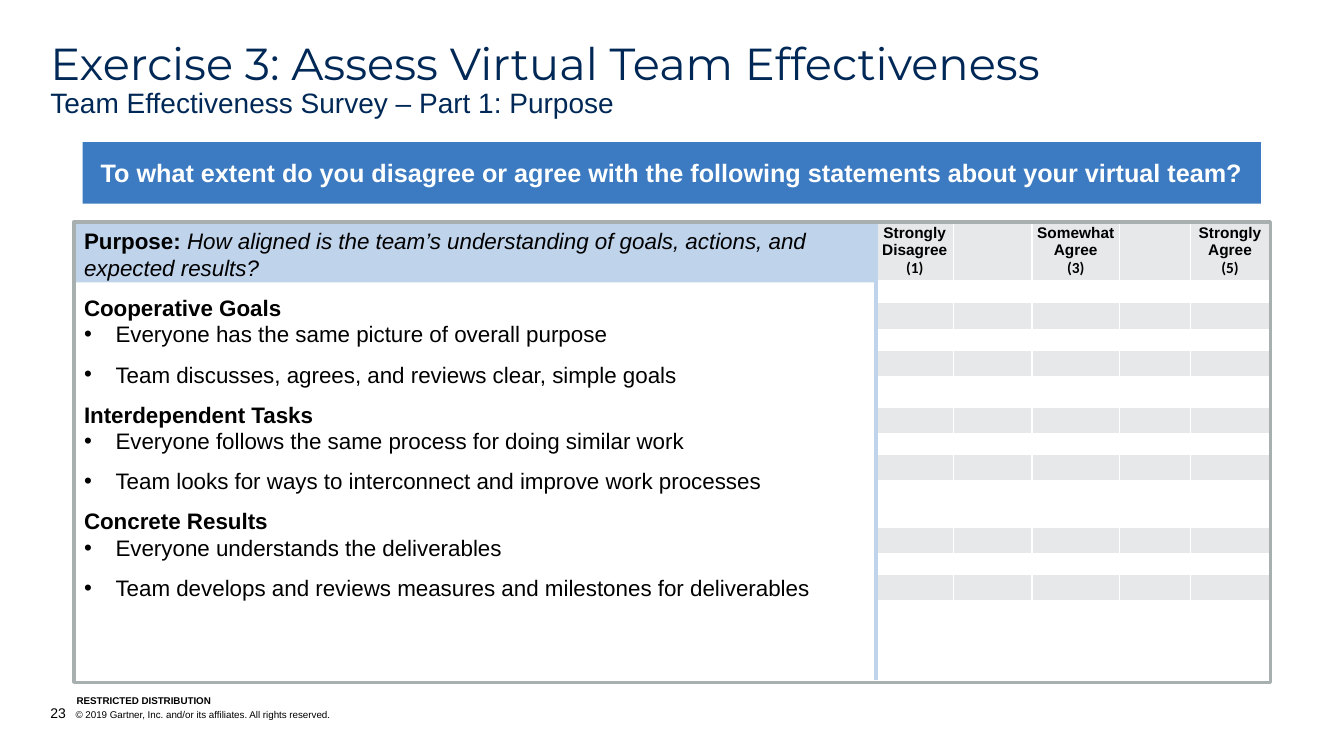
from lxml import etree
from pptx import Presentation
from pptx.dml.color import RGBColor
from pptx.enum.shapes import MSO_CONNECTOR, MSO_SHAPE
from pptx.enum.text import MSO_ANCHOR, MSO_AUTO_SIZE, PP_ALIGN
from pptx.oxml.ns import qn
from pptx.util import Pt

RECT, STRAIGHT = MSO_SHAPE.RECTANGLE, MSO_CONNECTOR.STRAIGHT
TOP, MIDDLE, BOTTOM = MSO_ANCHOR.TOP, MSO_ANCHOR.MIDDLE, MSO_ANCHOR.BOTTOM
LEFT, CENTER = PP_ALIGN.LEFT, PP_ALIGN.CENTER
NO_FIT = MSO_AUTO_SIZE.NONE

BLACK = RGBColor(0x00, 0x00, 0x00)
WHITE = RGBColor(0xFF, 0xFF, 0xFF)
NAVY = RGBColor(0x00, 0x28, 0x56)
BLUE = RGBColor(0x3C, 0x7B, 0xC1)
PALE_BLUE = RGBColor(0xBF, 0xD3, 0xEB)
PALE_GREY = RGBColor(0xE7, 0xE8, 0xE9)
FRAME_GREY = RGBColor(0xA7, 0xAF, 0xAF)

GOALS = [
    ("Cooperative Goals", [
        "Everyone has the same picture of overall purpose",
        "Team discusses, agrees, and reviews clear, simple goals"]),
    ("Interdependent Tasks", [
        "Everyone follows the same process for doing similar work",
        "Team looks for ways to interconnect and improve work processes"]),
    ("Concrete Results", [
        "Everyone understands the deliverables",
        "Team develops and reviews measures and milestones for deliverables"]),
]
SCALE = {0: ("Strongly Disagree", "(1)"), 2: ("Somewhat Agree", "(3)"),
         4: ("Strongly Agree", "(5)")}
COLUMNS = [55.5, 56, 62.5, 51, 56]
GAPS = [15.7, 15, 22, 15, 33.5, 14.3]
HEADER_ROW, ANSWER_ROW, LAST_ROW = 43, 18.8, 29
TABLE_LEFT, TABLE_TOP = 625.7, 157.7
LINE, GAP, INDENT = 19.2, 9.4, 22.5


def add_text(p, text, size=16, font="Arial", color=BLACK, bold=False, italic=False):
    """Add a formatted run to a paragraph."""
    r = p.add_run()
    r.text = text
    r.font.size, r.font.name = Pt(size), font
    r.font.bold, r.font.italic = bold, italic
    r.font.color.rgb = color


def next_paragraph(tf):
    """Return the first paragraph while it is empty, or else a new one."""
    first = tf.paragraphs[0]
    return tf.add_paragraph() if first.runs else first


def place(sp, left, top, width, height):
    """Move and size a shape, in points."""
    sp.left, sp.top, sp.width, sp.height = Pt(left), Pt(top), Pt(width), Pt(height)


def set_frame(tf, anchor, inset_x=0, inset_y=0):
    """Set wrapping, anchor and insets of a text frame."""
    tf.word_wrap, tf.auto_size, tf.vertical_anchor = True, NO_FIT, anchor
    tf.margin_left = tf.margin_right = Pt(inset_x)
    tf.margin_top = tf.margin_bottom = Pt(inset_y)


def add_rect(s, box, color):
    """Add a plain filled rectangle."""
    sp = s.shapes.add_shape(RECT, *map(Pt, box))
    sp.shadow.inherit = False
    sp.fill.solid()
    sp.fill.fore_color.rgb = color
    sp.line.fill.background()
    return sp


def add_title(s):
    """Fill the title placeholder with title and subtitle."""
    sp = s.shapes.title
    place(sp, 36, 29.5, 888, 34.6)
    set_frame(sp.text_frame, TOP)
    p = sp.text_frame.paragraphs[0]
    p.alignment, p.line_spacing = LEFT, 0.9
    add_text(p, "Exercise 3: Assess Virtual Team Effectiveness", size=32,
             font="Montserrat", color=NAVY)
    p.add_line_break()
    add_text(p, "Team Effectiveness Survey – Part 1: Purpose", size=20, color=NAVY)


def add_banner(s):
    """Add the survey question."""
    sp = add_rect(s, (59, 101.5, 841.7, 44), BLUE)
    set_frame(sp.text_frame, MIDDLE, 7.2, 3.6)
    p = sp.text_frame.paragraphs[0]
    p.alignment = CENTER
    add_text(p, "To what extent do you disagree or agree with the following "
             "statements about your virtual team?", size=18, color=WHITE, bold=True)


def add_line(s, start, end, color, width):
    """Add a straight line without shadow."""
    line = s.shapes.add_connector(STRAIGHT, *map(Pt, start + end))
    line.line.color.rgb, line.line.width = color, Pt(width)
    etree.SubElement(line._element.spPr, qn("a:effectLst"))


def add_item(tf, gap=0, bullet=False):
    """Start a list paragraph, with or without a bullet."""
    p = next_paragraph(tf)
    pPr = p._p.get_or_add_pPr()
    indent = Pt(INDENT) if bullet else 0
    pPr.set("marL", str(indent))
    pPr.set("indent", str(-indent))
    if bullet:
        etree.SubElement(pPr, qn("a:buFont"), typeface="Arial")
        etree.SubElement(pPr, qn("a:buChar"), char="•")
    else:
        etree.SubElement(pPr, qn("a:buNone"))
    p.alignment, p.line_spacing = LEFT, Pt(LINE)
    p.space_before, p.space_after = Pt(gap), Pt(0)
    return p


def add_statements(s):
    """Fill the framed body placeholder with the purpose and its statements."""
    sp = s.placeholders[1]
    s.shapes._spTree.append(sp._element)
    place(sp, 52.8, 158.4, 854.6, 329)
    sp.line.color.rgb, sp.line.width = FRAME_GREY, Pt(2.5)
    tf = sp.text_frame
    set_frame(tf, TOP, 7.2, 3.6)
    p = add_item(tf)
    add_text(p, "Purpose: ", bold=True)
    add_text(p, "How aligned is the team’s understanding of goals, actions, and",
             italic=True)
    add_text(add_item(tf), "expected results?", italic=True)
    for heading, statements in GOALS:
        add_text(add_item(tf, GAP), heading, bold=True)
        for i, statement in enumerate(statements):
            add_text(add_item(tf, GAP * i, bullet=True), statement)


def format_cell(cell, color):
    """Give a cell thin white borders, a fill and small margins."""
    tcPr = cell._tc.get_or_add_tcPr()
    for side in ("a:lnL", "a:lnR", "a:lnT", "a:lnB"):
        ln = etree.SubElement(tcPr, qn(side), w=str(Pt(1)))
        fill = etree.SubElement(ln, qn("a:solidFill"))
        etree.SubElement(fill, qn("a:srgbClr"), val=str(WHITE))
    cell.fill.solid()
    cell.fill.fore_color.rgb = color
    cell.vertical_anchor = MIDDLE
    cell.margin_left = cell.margin_right = cell.margin_top = Pt(0.72)
    cell.margin_bottom = 0


def add_scale_table(s):
    """Add the answer grid with its scale header."""
    rows = [HEADER_ROW]
    for gap in GAPS:
        rows += [gap, ANSWER_ROW]
    rows.append(LAST_ROW)
    table = s.shapes.add_table(len(rows), len(COLUMNS), Pt(TABLE_LEFT), Pt(TABLE_TOP),
                               Pt(sum(COLUMNS)), Pt(sum(rows))).table
    table.first_row = table.horz_banding = False
    for column, width in zip(table.columns, COLUMNS):
        column.width = Pt(width)
    for i, height in enumerate(rows):
        table.rows[i].height = Pt(height)
        for j, cell in enumerate(table.rows[i].cells):
            format_cell(cell, WHITE if i % 2 else PALE_GREY)
            if i == 0 and j in SCALE:
                for text, font in zip(SCALE[j], ("Arial", "Calibri")):
                    p = next_paragraph(cell.text_frame)
                    p.alignment = CENTER
                    add_text(p, text, size=11, font=font, bold=True)
            else:
                p = cell.text_frame.paragraphs[0]
                etree.SubElement(p._p, qn("a:endParaRPr"), sz="800")


def add_footer(s, box, *parts):
    """Add a footer line of (text, size, bold) parts with a hanging tab."""
    tf = s.shapes.add_textbox(*map(Pt, box)).text_frame
    set_frame(tf, BOTTOM)
    p = tf.paragraphs[0]
    pPr = p._p.get_or_add_pPr()
    pPr.set("marL", str(Pt(18)))
    pPr.set("indent", str(-Pt(18)))
    tabs = etree.SubElement(pPr, qn("a:tabLst"))
    etree.SubElement(tabs, qn("a:tab"), pos=str(Pt(18)), algn="l")
    for text, size, bold in parts:
        add_text(p, text, size=size, bold=bold)


def main():
    """Build and save the survey slide."""
    prs = Presentation()
    prs.slide_width, prs.slide_height = Pt(960), Pt(540)
    s = prs.slides.add_slide(prs.slide_layouts[1])
    add_footer(s, (36, 503.3, 575.3, 12.2), ("23", 10, False),
               ("\t© 2019 Gartner, Inc. and/or its affiliates. All rights reserved.",
                7, False))
    add_footer(s, (54.7, 496, 182, 8.6), ("RESTRICTED DISTRIBUTION", 7, True))
    add_scale_table(s)
    add_title(s)
    add_line(s, (TABLE_LEFT, TABLE_TOP), (TABLE_LEFT, 486), PALE_BLUE, 2.5)
    add_rect(s, (53.3, TABLE_TOP, 572.4, 44), PALE_BLUE)
    add_statements(s)
    add_banner(s)
    prs.save("out.pptx")


if __name__ == "__main__":
    main()
